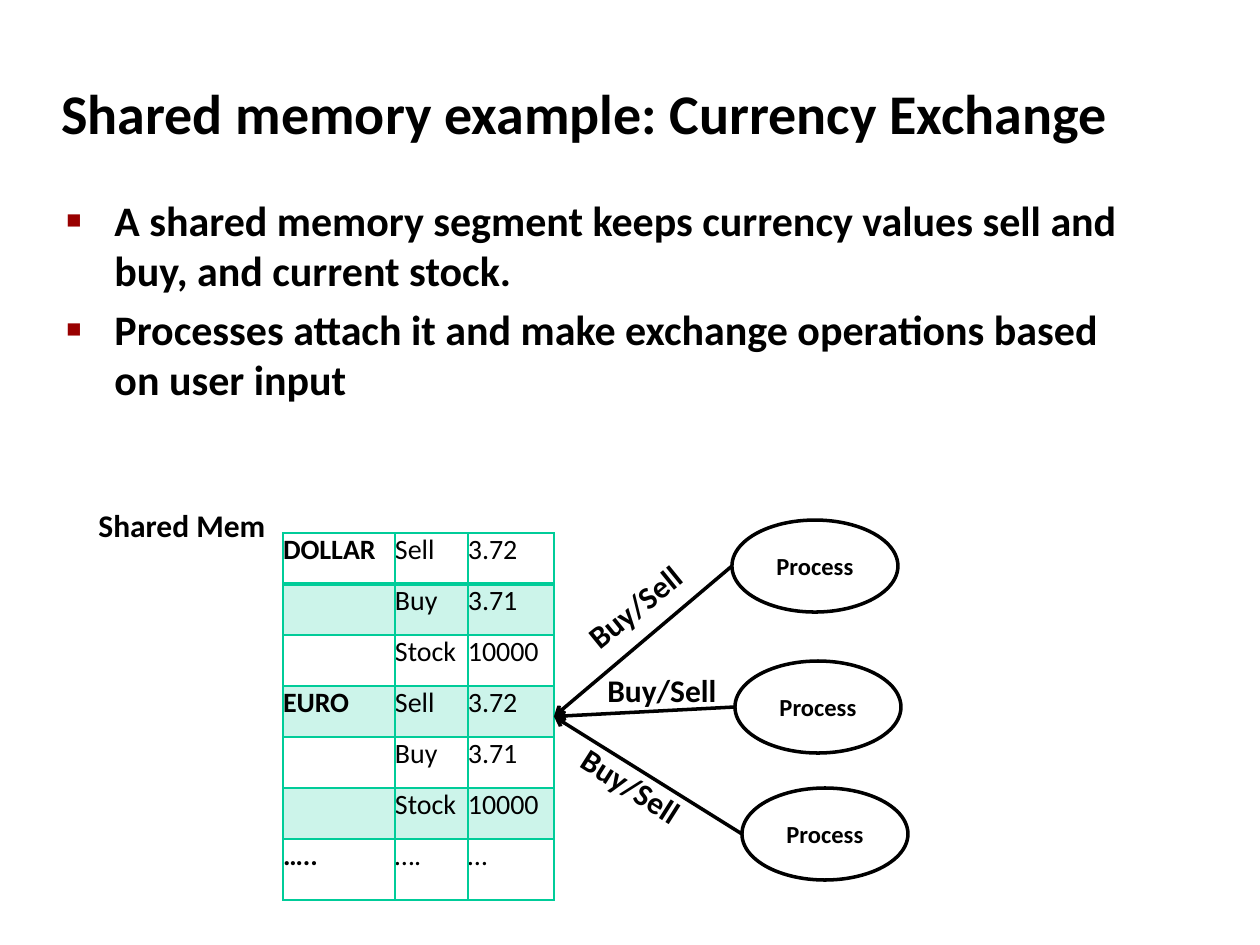
from lxml.etree import SubElement
from pptx import Presentation
from pptx.dml.color import RGBColor
from pptx.enum.shapes import MSO_CONNECTOR, MSO_SHAPE
from pptx.enum.text import MSO_ANCHOR, MSO_AUTO_SIZE, PP_ALIGN
from pptx.oxml.ns import qn
from pptx.util import Emu, Pt

PX = 914400 / 126
BLACK, GREEN, RED = "000000", "00CC99", "990000"
POINTS = [
    "A shared memory segment keeps currency values sell and buy, and current stock.",
    "Processes attach it and make exchange operations based on user input",
]
RATES = [
    ("DOLLAR", "Sell", "3.72"),
    ("", "Buy", "3.71"),
    ("", "Stock", "10000"),
    ("EURO", "Sell", "3.72"),
    ("", "Buy", "3.71"),
    ("", "Stock", "10000"),
    ("…..", "….", "…"),
]
TABLE_LEFT, TABLE_TOP = 283, 533
COLUMN_WIDTHS = [112, 73, 86]
ROW_HEIGHTS = [51] * 6 + [61]
# Process left and top, label left and top, label rotation
PROCESSES = [
    (732, 520, 567, 581, 320.9),
    (735, 661, 595, 665, 0),
    (742, 788, 564, 761, 32.4),
]
PROCESS_WIDTH, PROCESS_HEIGHT = 166, 92


def px(*lengths):
    return [Emu(round(length * PX)) for length in lengths]


def color(value):
    return RGBColor.from_string(value)


def add_xml(parent, tag, **attributes):
    return SubElement(parent, qn(tag), attributes)


def style_font(paragraph, size, bold=True):
    font = paragraph.font
    font.name, font.size, font.bold = "Calibri", Pt(size), bold
    font.color.rgb = color(BLACK)


def add_text(slide, box, text, size, wrap=False):
    """Add bold text; without wrapping the box fits its text."""
    holder = slide.shapes.add_textbox(*px(*box))
    frame = holder.text_frame
    frame.text = text
    frame.word_wrap = wrap
    frame.auto_size = MSO_AUTO_SIZE.NONE if wrap else MSO_AUTO_SIZE.SHAPE_TO_FIT_TEXT
    for paragraph in frame.paragraphs:
        style_font(paragraph, size)
    return holder


def add_bullet(paragraph):
    paragraph.space_before = Pt(4.8)
    indent = px(48)[0]
    properties = paragraph._p.get_or_add_pPr()
    properties.set("marL", str(indent))
    properties.set("indent", str(-indent))
    bullet_color = add_xml(properties, "a:buClr")
    add_xml(bullet_color, "a:srgbClr", val=RED)
    add_xml(properties, "a:buSzPct", val="60000")
    add_xml(properties, "a:buFont", typeface="Arial")
    add_xml(properties, "a:buChar", char="■")
    # Default run properties come last in a paragraph's properties
    properties.append(properties.find(qn("a:defRPr")))


def add_borders(cell, bottom):
    properties = cell._tc.get_or_add_tcPr()
    for side, width in (("L", 1), ("R", 1), ("T", 1), ("B", bottom)):
        line = add_xml(properties, f"a:ln{side}", w=str(Pt(width)))
        add_xml(add_xml(line, "a:solidFill"), "a:srgbClr", val=GREEN)


def fill_cell(cell, shaded):
    if not shaded:
        cell.fill.background()
        return
    cell.fill.solid()
    cell.fill.fore_color.rgb = color(GREEN)
    tint = cell._tc.tcPr.find(qn("a:solidFill")).find(qn("a:srgbClr"))
    add_xml(tint, "a:alpha", val="20000")


def add_rates(slide):
    box = px(TABLE_LEFT, TABLE_TOP, sum(COLUMN_WIDTHS), sum(ROW_HEIGHTS))
    table = slide.shapes.add_table(len(RATES), len(COLUMN_WIDTHS), *box).table
    table.first_row = table.horz_banding = False
    for column, width in zip(table.columns, px(*COLUMN_WIDTHS)):
        column.width = width
    for row, height in zip(table.rows, px(*ROW_HEIGHTS)):
        row.height = height
    for r, values in enumerate(RATES):
        for c, value in enumerate(values):
            cell = table.cell(r, c)
            cell.text = value
            cell.margin_left = cell.margin_right = 0
            cell.margin_top = cell.margin_bottom = 0
            style_font(cell.text_frame.paragraphs[0], 16, bold=c == 0)
            add_borders(cell, bottom=2 if r == 0 else 1)
            fill_cell(cell, shaded=r % 2 == 1)


def add_process(slide, left, top):
    process = slide.shapes.add_shape(
        MSO_SHAPE.OVAL, *px(left, top, PROCESS_WIDTH, PROCESS_HEIGHT))
    process.shadow.inherit = False
    process.fill.background()
    process.line.color.rgb = color(BLACK)
    process.line.width = Pt(2)
    frame = process.text_frame
    frame.text = "Process"
    frame.vertical_anchor = MSO_ANCHOR.MIDDLE
    paragraph = frame.paragraphs[0]
    paragraph.alignment = PP_ALIGN.CENTER
    style_font(paragraph, 14)


def add_arrow(slide, start, end):
    arrow = slide.shapes.add_connector(MSO_CONNECTOR.STRAIGHT, *px(*start, *end))
    arrow.line.color.rgb = color(BLACK)
    arrow.line.width = Pt(2)
    add_xml(arrow.line._get_or_add_ln(), "a:tailEnd", type="arrow")
    add_xml(arrow._element.spPr, "a:effectLst")


def main():
    deck = Presentation()
    deck.slide_width, deck.slide_height = px(1260, 945)
    slide = deck.slides.add_slide(deck.slide_layouts[6])

    title = add_text(slide, (49, 60, 1109, 105),
                     "Shared memory example: Currency Exchange", 32, wrap=True)
    title.text_frame.vertical_anchor = MSO_ANCHOR.MIDDLE
    body = add_text(slide, (54, 188, 1089, 685), "\n".join(POINTS), 24, wrap=True)
    for paragraph in body.text_frame.paragraphs:
        add_bullet(paragraph)

    add_rates(slide)
    add_text(slide, (86, 500, 194, 50), "Shared Mem", 18)

    table_side = (TABLE_LEFT + sum(COLUMN_WIDTHS), TABLE_TOP + sum(ROW_HEIGHTS) / 2)
    for left, top, label_left, label_top, rotation in PROCESSES:
        add_process(slide, left, top)
        add_arrow(slide, (left, top + PROCESS_HEIGHT / 2), table_side)
        label = add_text(slide, (label_left, label_top, 136, 50), "Buy/Sell", 18)
        label.rotation = rotation

    deck.save("out.pptx")


if __name__ == "__main__":
    main()
